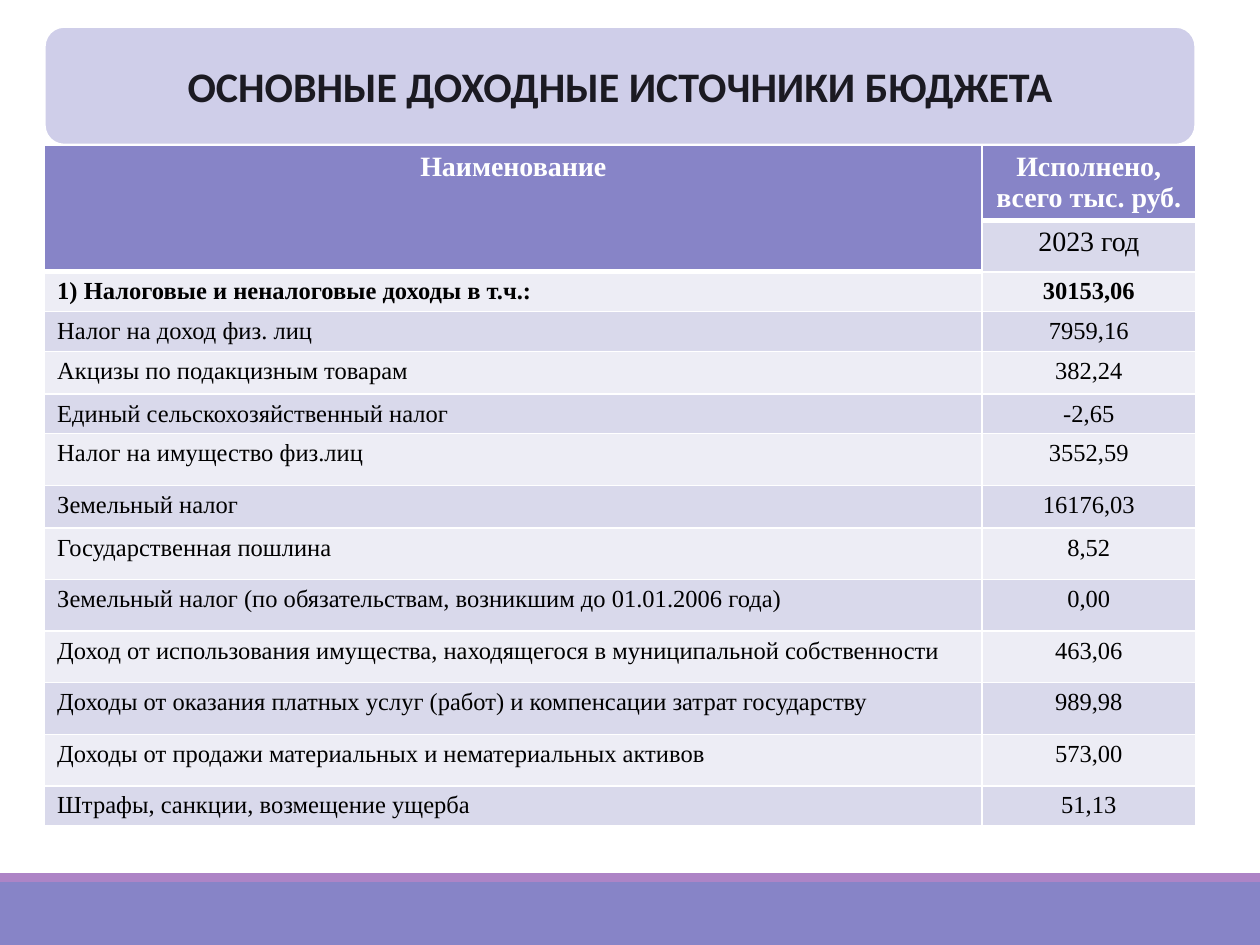
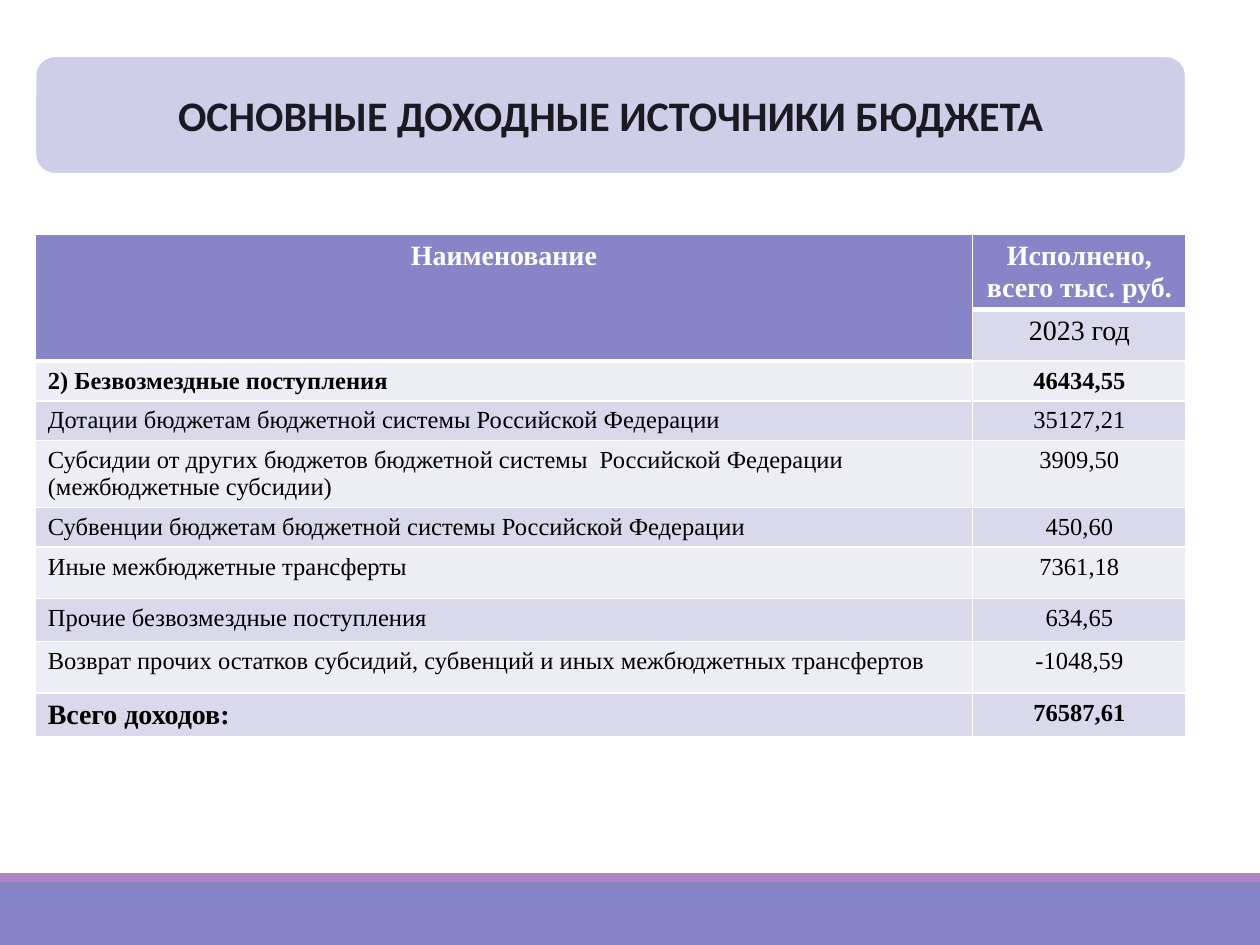
from lxml.etree import SubElement
from pptx import Presentation
from pptx.dml.color import RGBColor
from pptx.enum.shapes import MSO_SHAPE as Preset
from pptx.enum.text import MSO_ANCHOR as Anchor, MSO_AUTO_SIZE as AutoSize, PP_ALIGN as Align
from pptx.oxml.ns import qn
from pptx.util import Cm, Pt

COLOURS = {
    "white": "FFFFFF", "black": "000000", "title": "1B1A22", "panel": "CFCEE9",
    "header": "8784C7", "stripe": "AD84C6", "dark_row": "D9D9EB", "light_row": "EDEDF5",
}
TITLE = "ОСНОВНЫЕ ДОХОДНЫЕ ИСТОЧНИКИ БЮДЖЕТА"
TITLE_FONT = {"name": "Calibri", "size": Pt(24), "bold": True}
HEADER_FONT = {"name": "Times New Roman", "size": Pt(16), "bold": True}
YEAR_FONT = HEADER_FONT | {"bold": False}
ROW_FONT = YEAR_FONT | {"size": Pt(14)}
SUM_FONT = ROW_FONT | {"bold": True}

PAGE_WIDTH, PAGE_HEIGHT = 25.4, 19.05
TITLE_HEIGHT = 2.38
COLUMN_WIDTHS = (18.9, 4.3)
CONTENT_WIDTH = sum(COLUMN_WIDTHS)
HEADER_HEIGHTS = (1.47, 1.04)
LOW, MIDDLE, HIGH = 0.8, 0.86, 1.04

# Each row: label, amount, height in cm
OWN_INCOME = [
    ("1) Налоговые и неналоговые доходы в т.ч.:", "30153,06", LOW),
    ("Налог на доход физ. лиц", "7959,16", LOW),
    ("Акцизы по подакцизным товарам", "382,24", MIDDLE),
    ("Единый сельскохозяйственный налог", "-2,65", LOW),
    ("Налог на имущество физ.лиц", "3552,59", HIGH),
    ("Земельный налог", "16176,03", MIDDLE),
    ("Государственная пошлина", "8,52", HIGH),
    ("Земельный налог (по обязательствам, возникшим до 01.01.2006 года)", "0,00", HIGH),
    ("Доход от использования имущества, находящегося в муниципальной собственности",
     "463,06", HIGH),
    ("Доходы от оказания платных услуг (работ) и компенсации затрат государству",
     "989,98", HIGH),
    ("Доходы от продажи материальных и нематериальных активов", "573,00", HIGH),
    ("Штрафы, санкции, возмещение ущерба", "51,13", LOW),
]
TRANSFERS = [
    ("2) Безвозмездные поступления", "46434,55", LOW),
    ("Дотации бюджетам бюджетной системы Российской Федерации", "35127,21", LOW),
    ("Субсидии от других бюджетов бюджетной системы  Российской Федерации "
     "(межбюджетные субсидии)", "3909,50", 1.34),
    ("Субвенции бюджетам бюджетной системы Российской Федерации", "450,60", LOW),
    ("Иные межбюджетные трансферты", "7361,18", HIGH),
    ("Прочие безвозмездные поступления", "634,65", MIDDLE),
    ("Возврат прочих остатков субсидий, субвенций и иных межбюджетных трансфертов",
     "-1048,59", HIGH),
    ("Всего доходов:", "76587,61", MIDDLE),
]
TOTAL_LABEL = "Всего доходов:"


def colour(name):
    return RGBColor.from_string(COLOURS[name])


def write(frame, text, font, ink, align):
    para = frame.paragraphs[0]
    para.alignment = align
    span = para.add_run()
    span.text = text
    for key, value in font.items():
        setattr(span.font, key, value)
    span.font.color.rgb = colour(ink)


def add_box(page, preset, box, fill):
    shape = page.shapes.add_shape(preset, *map(Cm, box))
    shape.shadow.inherit = False
    shape.fill.solid()
    shape.fill.fore_color.rgb = colour(fill)
    shape.line.fill.background()
    return shape


def send_to_back(shape, holder):
    """Move a shape to the back of a slide or a master."""
    holder.shapes.element.insert(2, shape.element)


def add_footer_bands(deck, page):
    """Draw the bottom bands and hand them to the master."""
    bands = (("stripe", 17.6, 0.18), ("header", 17.78, PAGE_HEIGHT - 17.78))
    for number, (fill, top, height) in enumerate(bands, start=101):
        band = add_box(page, Preset.RECTANGLE, (0, top, PAGE_WIDTH, height), fill)
        band.element.nvSpPr.cNvPr.set("id", str(number))
        send_to_back(band, deck.slide_master)


def add_title(page, left, top):
    box = (left, top, CONTENT_WIDTH, TITLE_HEIGHT)
    panel = add_box(page, Preset.ROUNDED_RECTANGLE, box, "panel")
    panel.line.color.rgb = colour("white")
    panel.line.width = Pt(1.25)
    send_to_back(panel, page)

    title = page.shapes.title
    for side, value in zip(("left", "top", "width", "height"), box):
        setattr(title, side, Cm(value))
    frame = title.text_frame
    frame.auto_size = AutoSize.NONE
    frame.vertical_anchor = Anchor.MIDDLE
    write(frame, TITLE, TITLE_FONT, "title", Align.CENTER)


def style_cell(cell, fill, top=1, bottom=1):
    """Fill a cell and give it white borders, with widths in points."""
    properties = cell._tc.get_or_add_tcPr()
    for side, width in (("L", 1), ("R", 1), ("T", top), ("B", bottom)):
        line = SubElement(properties, qn(f"a:ln{side}"), w=str(Pt(width)))
        solid = SubElement(line, qn("a:solidFill"))
        SubElement(solid, qn("a:srgbClr"), val=COLOURS["white"])
    cell.fill.solid()
    cell.fill.fore_color.rgb = colour(fill)


def add_table_header(table):
    table.cell(0, 0).merge(table.cell(1, 0))
    for column, text in enumerate(("Наименование", "Исполнено, всего тыс. руб.")):
        cell = table.cell(0, column)
        style_cell(cell, "header", bottom=3)
        write(cell.text_frame, text, HEADER_FONT, "white", Align.CENTER)
    style_cell(table.cell(1, 0), "header", bottom=3)
    year = table.cell(1, 1)
    style_cell(year, "dark_row", top=3)
    write(year.text_frame, "2023 год", YEAR_FONT, "black", Align.CENTER)


def add_income_table(page, left, top, rows):
    heights = [*HEADER_HEIGHTS, *(height for _, _, height in rows)]
    box = map(Cm, (left, top, CONTENT_WIDTH, sum(heights)))
    table = page.shapes.add_table(len(heights), len(COLUMN_WIDTHS), *box).table
    for column, width in zip(table.columns, COLUMN_WIDTHS):
        column.width = Cm(width)
    for row, height in zip(table.rows, heights):
        row.height = Cm(height)
    add_table_header(table)

    for index, (label, amount, _) in enumerate(rows):
        is_total = label == TOTAL_LABEL
        amount_font = SUM_FONT if index == 0 or is_total else ROW_FONT
        label_font = HEADER_FONT if is_total else amount_font
        fill = "dark_row" if index % 2 else "light_row"
        name_cell, amount_cell = table.rows[index + len(HEADER_HEIGHTS)].cells
        style_cell(name_cell, fill, top=1 if index else 3)
        style_cell(amount_cell, fill)
        write(name_cell.text_frame, label, label_font, "black", Align.LEFT)
        write(amount_cell.text_frame, amount, amount_font, "black", Align.CENTER)


def add_income_page(deck, left, title_top, table_top, rows):
    page = deck.slides.add_slide(deck.slide_layouts[5])
    add_title(page, left, title_top)
    add_income_table(page, left, table_top, rows)
    return page


def main():
    deck = Presentation()
    deck.slide_width, deck.slide_height = Cm(PAGE_WIDTH), Cm(PAGE_HEIGHT)
    first_page = add_income_page(deck, 0.9, 0.54, 2.93, OWN_INCOME)
    add_footer_bands(deck, first_page)
    add_income_page(deck, 0.71, 1.13, 4.73, TRANSFERS)
    deck.save("out.pptx")


if __name__ == "__main__":
    main()
